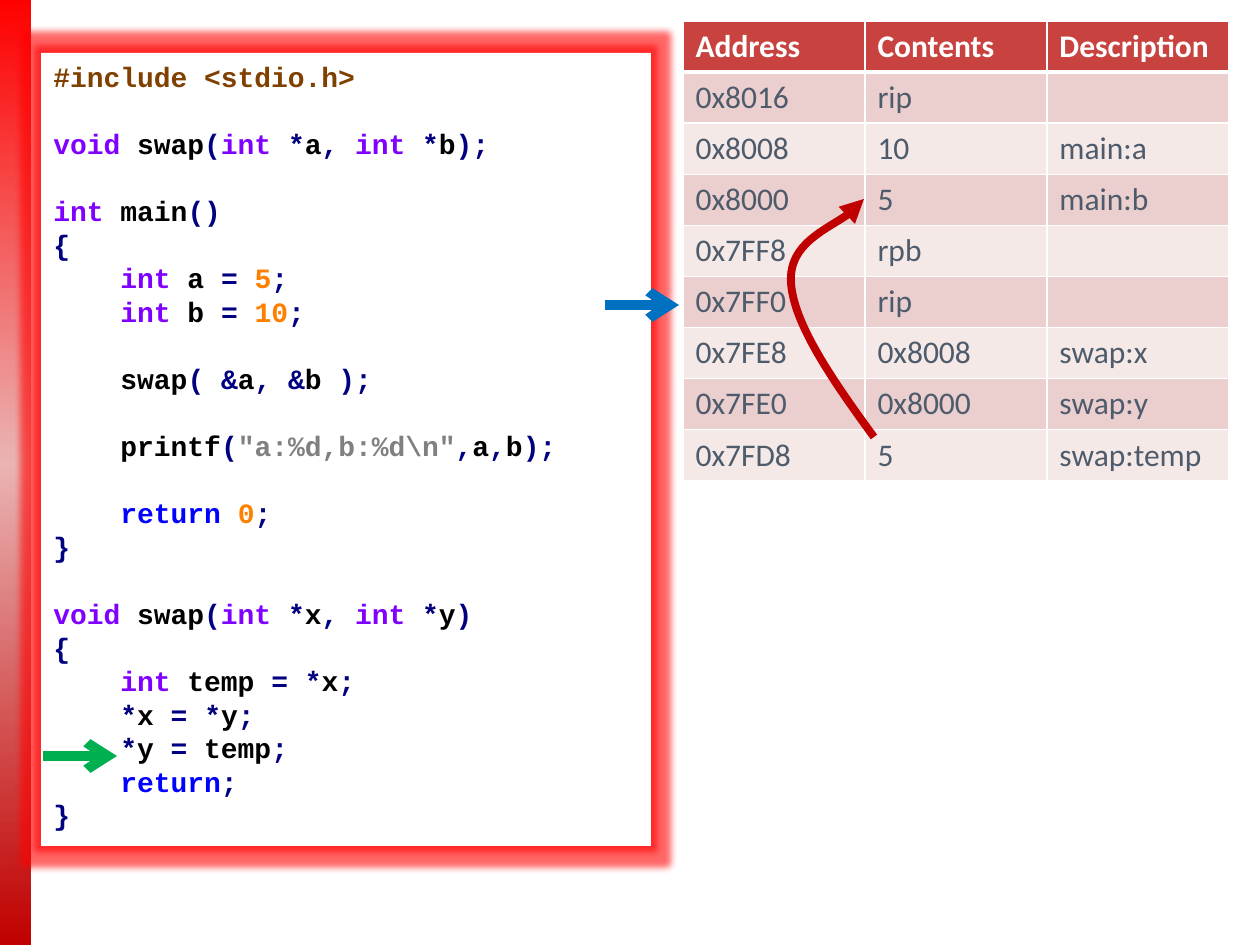
from copy import deepcopy
from itertools import groupby

from lxml.etree import SubElement
from pptx import Presentation
from pptx.dml.color import RGBColor
from pptx.enum.shapes import MSO_CONNECTOR, MSO_SHAPE
from pptx.enum.text import MSO_ANCHOR, PP_ALIGN
from pptx.oxml.ns import qn
from pptx.util import Emu, Pt

SCALE = 914400 / 126
LINE_PITCH = Pt(19.2)

COLORS = {
    "white": "FFFFFF", "header": "C84340", "odd": "EBCFCF", "even": "F5E9E8",
    "cell": "4D5B6B", "glow": "FF0000", "green": "00B050", "blue": "0070C0",
    "red": "C00000", "directive": "804000", "type": "8000FF", "return": "0000FF",
    "name": "000000", "symbol": "000080", "number": "FF8000", "string": "808080",
}
BAR_STOPS = [(0, "FF0000"), (0.49, "E9B4B3"), (1, "C00000")]

CODE = r'''#include <stdio.h>

void swap(int *a, int *b);

int main()
{
    int a = 5;
    int b = 10;

    swap( &a, &b );

    printf("a:%d,b:%d\n",a,b);

    return 0;
}

void swap(int *x, int *y)
{
    int temp = *x;
    *x = *y;
    *y = temp;
    return;
}'''

STACK = [
    ("Address", "Contents", "Description"),
    ("0x8016", "rip", ""),
    ("0x8008", "10", "main:a"),
    ("0x8000", "5", "main:b"),
    ("0x7FF8", "rpb", ""),
    ("0x7FF0", "rip", ""),
    ("0x7FE8", "0x8008", "swap:x"),
    ("0x7FE0", "0x8000", "swap:y"),
    ("0x7FD8", "5", "swap:temp"),
]


def px(n):
    """Turn pixels into EMU."""
    return Emu(round(n * SCALE))


def rgb(name):
    """Look up a named colour."""
    return RGBColor.from_string(COLORS[name])


def add_rect(s, x, y, w, h):
    """Add a rectangle without line or shadow."""
    sp = s.shapes.add_shape(MSO_SHAPE.RECTANGLE, px(x), px(y), px(w), px(h))
    sp.shadow.inherit = False
    sp.line.fill.background()
    return sp


def add_side_bar(s):
    """Add the vertical gradient bar at the left edge."""
    fill = add_rect(s, 0, 0, 31, 945).fill
    fill.gradient()
    fill.gradient_angle = 270
    stops = fill._fill._gradFill.find(qn("a:gsLst"))
    stops.append(deepcopy(stops[-1]))
    for stop, (position, color) in zip(fill.gradient_stops, BAR_STOPS):
        stop.position = position
        stop.color.rgb = RGBColor.from_string(color)


def add_glow(sp, radius, alpha):
    """Give a shape a coloured glow."""
    effects = sp._element.spPr.find(qn("a:effectLst"))
    glow = SubElement(effects, qn("a:glow"), rad=str(radius))
    color = SubElement(glow, qn("a:srgbClr"), val=COLORS["glow"])
    SubElement(color, qn("a:alpha"), val=str(alpha * 1000))


def token_kind(token):
    """Name the syntax colour of one token."""
    if token in ("int", "void"):
        return "type"
    if token == "return":
        return "return"
    if token.isdigit():
        return "number"
    return "name" if token.isspace() or token.isalnum() else "symbol"


def tokens(line):
    """Yield the tokens of a code line with their kinds."""
    if line.startswith("#"):
        yield line, "directive"
        return
    for i, part in enumerate(line.split('"')):
        if i % 2:
            yield f'"{part}"', "string"
            continue
        for _, chars in groupby(part, lambda c: (c.isspace(), c.isalnum())):
            token = "".join(chars)
            yield token, token_kind(token)


def add_code(s):
    """Add the glowing code panel with coloured syntax."""
    sp = add_rect(s, 41, 53, 610, 793)
    sp.fill.solid()
    sp.fill.fore_color.rgb = rgb("white")
    add_glow(sp, Pt(8), 60)
    tf = sp.text_frame
    tf.word_wrap = True
    tf.vertical_anchor = MSO_ANCHOR.TOP
    gap = False
    for i, line in enumerate(CODE.splitlines()):
        if not line:
            gap = True
            continue
        p = tf.add_paragraph() if i else tf.paragraphs[0]
        p.alignment = PP_ALIGN.LEFT
        p.line_spacing = LINE_PITCH
        if gap:
            p.space_before = LINE_PITCH
        gap = False
        for kind, group in groupby(tokens(line), lambda t: t[1]):
            r = p.add_run()
            r.text = "".join(token for token, _ in group)
            r.font.name = "Courier New"
            r.font.size = Pt(16)
            r.font.bold = True
            r.font.color.rgb = rgb(kind)


def set_borders(cell, bottom):
    """Draw white borders, with the bottom width in points."""
    tcPr = cell._tc.get_or_add_tcPr()
    for i, (side, width) in enumerate(zip("LRTB", (1, 1, 1, bottom))):
        ln = SubElement(tcPr, qn(f"a:ln{side}"), w=str(Pt(width)))
        fill = SubElement(ln, qn("a:solidFill"))
        SubElement(fill, qn("a:srgbClr"), val=COLORS["white"])
        tcPr.insert(i, ln)


def add_stack_table(s):
    """Add the table of stack addresses."""
    rows, cols = len(STACK), len(STACK[0])
    table = s.shapes.add_table(rows, cols, px(683), px(21), px(182 * cols), px(51 * rows)).table
    for i, row in enumerate(STACK):
        for j, text in enumerate(row):
            cell = table.cell(i, j)
            cell.fill.solid()
            cell.fill.fore_color.rgb = rgb(("odd" if i % 2 else "even") if i else "header")
            set_borders(cell, 1 if i else 3)
            if text:
                r = cell.text_frame.paragraphs[0].add_run()
                r.text = text
                r.font.name = "Calibri"
                r.font.size = Pt(18)
                r.font.bold = i == 0
                r.font.color.rgb = rgb("cell" if i else "white")


def style_arrow(sp, color, width, head):
    """Set the line of an arrow and its head."""
    sp.line.color.rgb = rgb(color)
    sp.line.width = Pt(width)
    SubElement(sp.line._get_or_add_ln(), qn("a:tailEnd"), type=head)


def add_pointer(s, x, y, color):
    """Add a short arrow pointing right."""
    c = s.shapes.add_connector(MSO_CONNECTOR.STRAIGHT, px(x), px(y), px(x + 74), px(y))
    style_arrow(c, color, 5.5, "arrow")
    SubElement(c._element.spPr, qn("a:effectLst"))


def add_curved_arrow(s, start, controls):
    """Add an arrow along cubic curves, three points to a curve."""
    builder = s.shapes.build_freeform(*start, scale=SCALE)
    builder.add_line_segments(controls, close=False)
    sp = builder.convert_to_shape()
    sp.shadow.inherit = False
    sp.fill.background()
    segments = list(sp._element.iter(qn("a:lnTo")))
    outline = segments[0].getparent()
    for i in range(0, len(segments), 3):
        curve = SubElement(outline, qn("a:cubicBezTo"))
        for segment in segments[i:i + 3]:
            curve.append(segment[0])
            outline.remove(segment)
    style_arrow(sp, "red", 4.5, "triangle")


def main():
    """Build the slide."""
    prs = Presentation()
    prs.slide_width, prs.slide_height = px(1260), px(945)
    s = prs.slides.add_slide(prs.slide_layouts[6])
    add_side_bar(s)
    add_code(s)
    add_stack_table(s)
    add_pointer(s, 43, 756, "green")
    add_curved_arrow(s, (874, 437), [(833, 381), (793, 323), (791, 282),
                                     (789, 243), (867, 208), (864, 199)])
    add_pointer(s, 605, 305, "blue")
    prs.save("out.pptx")


if __name__ == "__main__":
    main()
